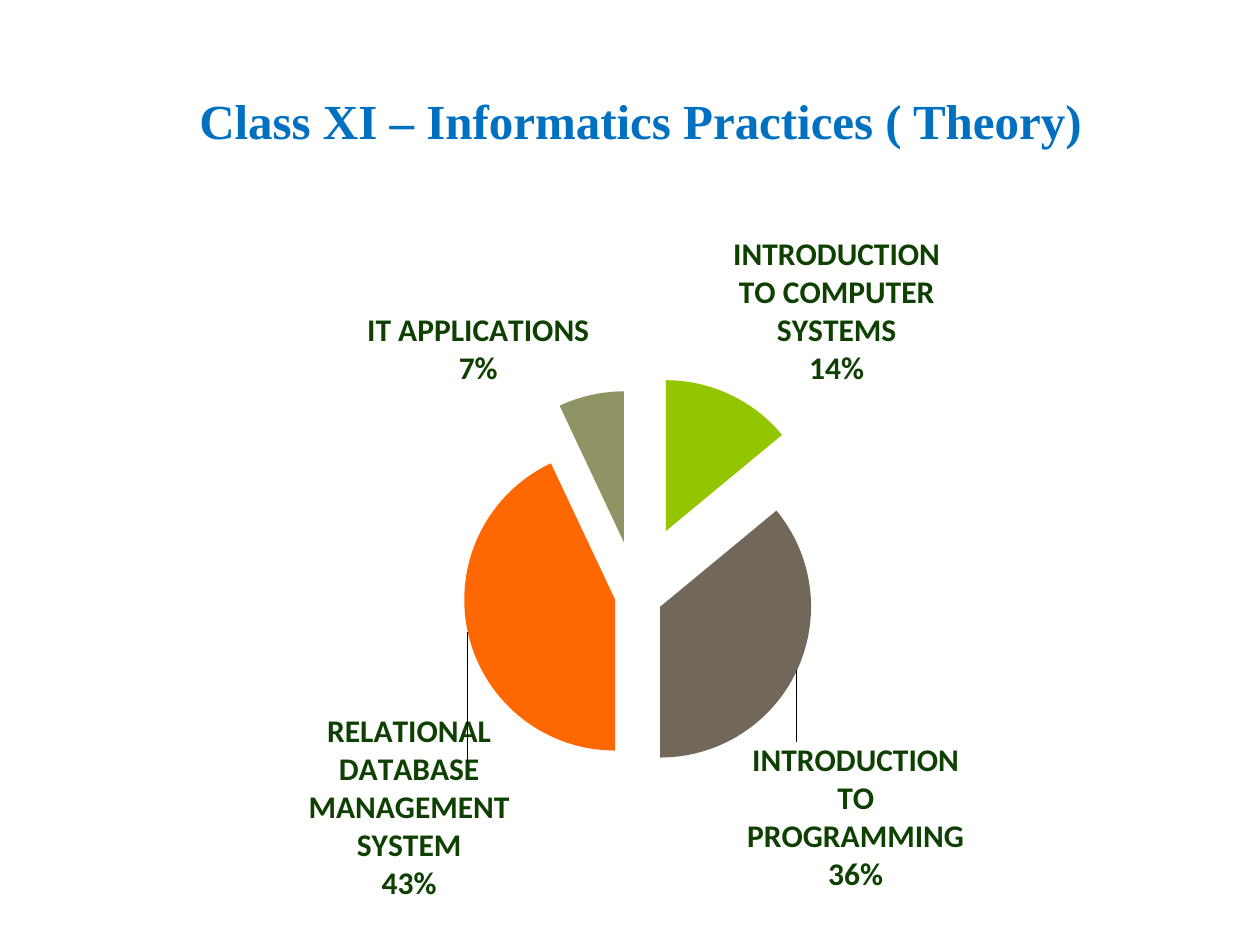
from copy import deepcopy
from dataclasses import dataclass
from typing import Optional

from pptx import Presentation
from pptx.chart.chart import Chart
from pptx.chart.data import CategoryChartData as ChartData
from pptx.dml.color import RGBColor as Color
from pptx.enum.chart import XL_CHART_TYPE as ChartType, XL_LABEL_POSITION as LabelPosition
from pptx.enum.text import MSO_ANCHOR as Anchor, PP_ALIGN as Align
from pptx.oxml import parse_xml
from pptx.oxml.ns import nsdecls, qn
from pptx.slide import Slide
from pptx.text.text import Font
from pptx.util import Emu, Pt

EMU_PER_PX = 914400 / 126


@dataclass(frozen=True)
class Theme:
    title_font: str = "Times New Roman"
    chart_font: str = "Calibri"
    title_color: str = "0070C0"
    label_color: str = "0E4002"
    chart_color: str = "000000"
    title_size: int = 28
    label_size: int = 18
    chart_size: int = 10


@dataclass(frozen=True)
class Box:
    left: int
    top: int
    width: int
    height: int

    def emu(self) -> tuple[Emu, ...]:
        return tuple(px(value) for value in (self.left, self.top, self.width, self.height))


@dataclass(frozen=True)
class Unit:
    name: str
    share: int
    color: str
    explosion: int
    label_shift: Optional[tuple[int, int]] = None


THEME = Theme()
TITLE_BOX = Box(168, 84, 945, 72)
CHART_BOX = Box(42, 210, 1197, 693)
PIE_BOX = Box(485, 444, 302, 302)
UNITS = [
    Unit("INTRODUCTION TO COMPUTER SYSTEMS", 14, "94C600", 47),
    Unit("INTRODUCTION TO PROGRAMMING", 36, "71685A", 18, (-56, 67)),
    Unit("RELATIONAL DATABASE MANAGEMENT SYSTEM", 43, "FF6700", 14, (49, 128)),
    Unit("IT APPLICATIONS", 7, "909465", 36),
]


def px(value: int) -> Emu:
    return Emu(round(value * EMU_PER_PX))


def style_font(font: Font, name: str, size: int, color: str, bold: bool) -> None:
    font.name = name
    font.size = Pt(size)
    font.bold = bold
    font.color.rgb = Color.from_string(color)


def add_title(page: Slide, text: str) -> None:
    frame = page.shapes.add_textbox(*TITLE_BOX.emu()).text_frame
    frame.word_wrap = True
    frame.vertical_anchor = Anchor.TOP
    para = frame.paragraphs[0]
    para.text = text
    para.alignment = Align.CENTER
    style_font(para.font, THEME.title_font, THEME.title_size, THEME.title_color, True)


def place_pie(chart: Chart) -> None:
    area = chart.element.find(".//" + qn("c:plotArea"))
    for layout in area.findall(qn("c:layout")):
        area.remove(layout)
    x = (PIE_BOX.left - CHART_BOX.left) / CHART_BOX.width
    y = (PIE_BOX.top - CHART_BOX.top) / CHART_BOX.height
    width = PIE_BOX.width / CHART_BOX.width
    height = PIE_BOX.height / CHART_BOX.height
    area.insert(0, parse_xml(
        f'<c:layout {nsdecls("c")}><c:manualLayout><c:layoutTarget val="inner"/>'
        f'<c:xMode val="edge"/><c:yMode val="edge"/><c:x val="{x:.3f}"/><c:y val="{y:.3f}"/>'
        f'<c:w val="{width:.3f}"/><c:h val="{height:.3f}"/></c:manualLayout></c:layout>'))


def explode_slices(chart: Chart) -> None:
    for unit, point in zip(UNITS, chart.element.iter(qn("c:dPt"))):
        explosion = parse_xml(f'<c:explosion {nsdecls("c")} val="{unit.explosion}"/>')
        point.find(qn("c:spPr")).addprevious(explosion)


def shift_labels(chart: Chart) -> None:
    labels = chart.element.find(".//" + qn("c:ser")).find(qn("c:dLbls"))
    text_style = labels.find(qn("c:txPr"))
    moved = [(index, unit.label_shift) for index, unit in enumerate(UNITS) if unit.label_shift]
    for order, (index, (right, down)) in enumerate(moved):
        label = parse_xml(
            f'<c:dLbl {nsdecls("c")}><c:idx val="{index}"/><c:layout><c:manualLayout>'
            f'<c:x val="{right / CHART_BOX.width:.3f}"/><c:y val="{down / CHART_BOX.height:.3f}"/>'
            '</c:manualLayout></c:layout><c:dLblPos val="outEnd"/><c:showLegendKey val="0"/>'
            '<c:showVal val="0"/><c:showCatName val="1"/><c:showSerName val="0"/>'
            '<c:showPercent val="1"/><c:showBubbleSize val="0"/>'
            '<c:separator>\n</c:separator></c:dLbl>')
        label.find(qn("c:dLblPos")).addprevious(deepcopy(text_style))
        labels.insert(order, label)
    separator = parse_xml(f'<c:separator {nsdecls("c")}>\n</c:separator>')
    labels.find(qn("c:showBubbleSize")).addnext(separator)


def add_pie(page: Slide) -> None:
    data = ChartData()
    data.categories = [unit.name for unit in UNITS]
    data.add_series("Series 1", [unit.share for unit in UNITS])
    chart = page.shapes.add_chart(ChartType.PIE, *CHART_BOX.emu(), data).chart
    chart.has_legend = False
    chart.has_title = False
    style_font(chart.font, THEME.chart_font, THEME.chart_size, THEME.chart_color, False)
    chart.plots[0].vary_by_categories = True
    series = chart.plots[0].series[0]
    for index, unit in enumerate(UNITS):
        fill = series.points[index].format.fill
        fill.solid()
        fill.fore_color.rgb = Color.from_string(unit.color)
    labels = series.data_labels
    labels.show_value = False
    labels.show_category_name = True
    labels.show_percentage = True
    labels.position = LabelPosition.OUTSIDE_END
    style_font(labels.font, THEME.chart_font, THEME.label_size, THEME.label_color, True)
    place_pie(chart)
    explode_slices(chart)
    shift_labels(chart)


def main() -> None:
    deck = Presentation()
    deck.slide_width, deck.slide_height = px(1260), px(945)
    page = deck.slides.add_slide(deck.slide_layouts[6])
    add_pie(page)
    add_title(page, "Class XI – Informatics Practices ( Theory)")
    deck.save("out.pptx")


if __name__ == "__main__":
    main()
